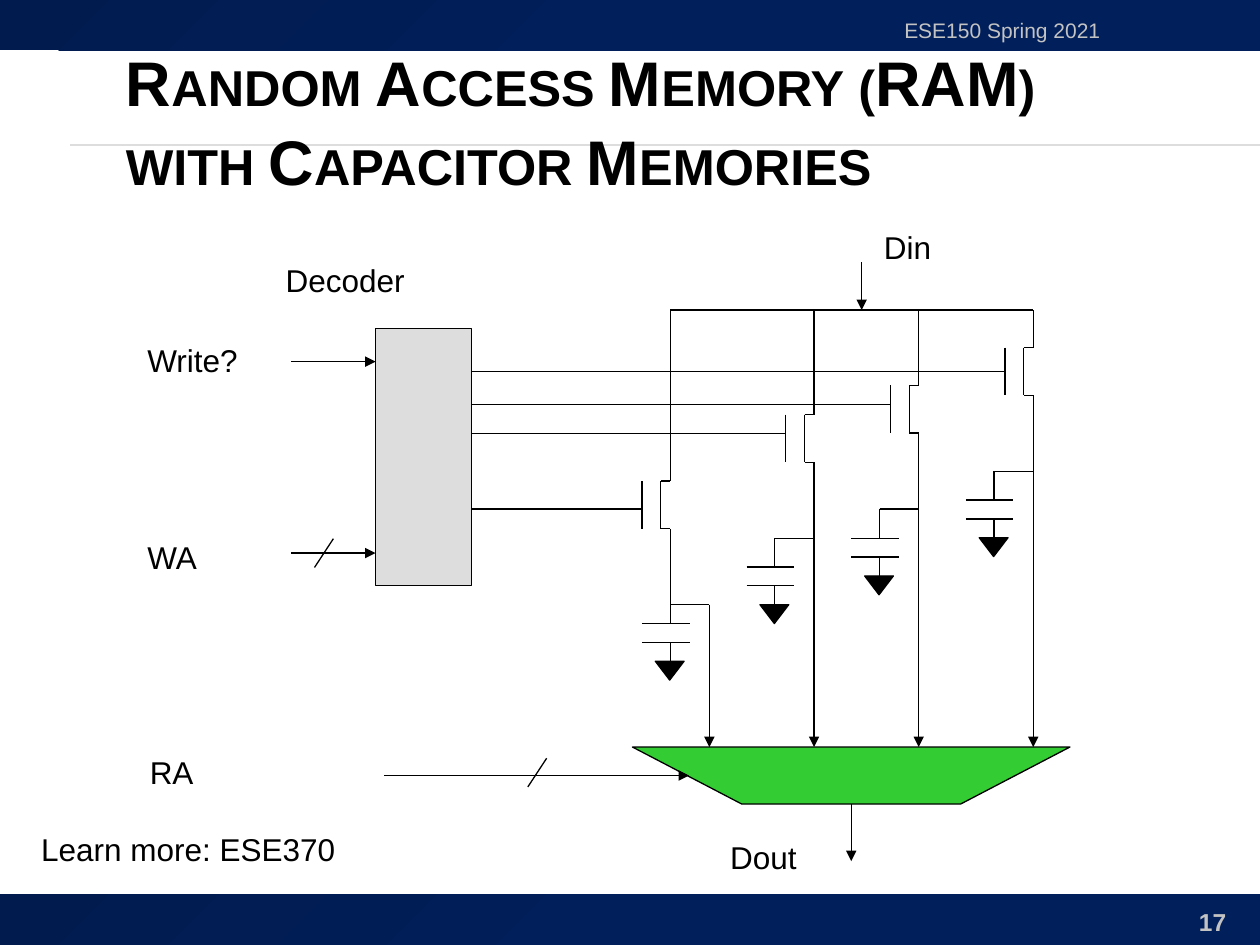
from collections import namedtuple

from lxml import etree
from pptx import Presentation
from pptx.dml.color import RGBColor
from pptx.enum.shapes import MSO_CONNECTOR, MSO_SHAPE
from pptx.enum.text import MSO_ANCHOR, PP_ALIGN
from pptx.oxml.ns import qn
from pptx.util import Cm, Pt

Box = namedtuple("Box", "left top width height")
Cell = namedtuple("Cell", "bit_x gate_top gate_wire tap plate cap_dx out_dx")

BLACK, GREY, GREEN, FOOTER_GREY = "000000", "DDDDDD", "33CC33", "C3C3C3"
NAVY_DARK, NAVY = "011B4E", "011F5B"

# Distances from the left end of the data-in bus, in cm
CELLS = [
    Cell(0, 3.45, 4.01, 5.94, 6.32, 0, 0.79),
    Cell(2.9, 2.11, 2.49, 4.6, 5.18, -0.79, 0),
    Cell(5.01, 1.52, 1.9, 4.01, 4.6, -0.79, 0),
    Cell(7.32, 0.76, 1.24, 3.25, 3.83, -0.79, 0),
]
GATE_HEIGHT = 0.96
PLATE_GAP = 0.38


def color(value):
    return RGBColor.from_string(value)


def add_line(slide, x1, y1, x2, y2, arrow=False, line_color=BLACK):
    line = slide.shapes.add_connector(
        MSO_CONNECTOR.STRAIGHT, Cm(x1), Cm(y1), Cm(x2), Cm(y2))
    line.line.color.rgb = color(line_color)
    line.line.width = Pt(0.75)
    properties = line._element.spPr
    if arrow:
        tail = etree.SubElement(properties.find(qn("a:ln")), qn("a:tailEnd"))
        tail.set("type", "triangle")
    etree.SubElement(properties, qn("a:effectLst"))
    return line


def style_shape(shape, fill):
    shape.shadow.inherit = False
    shape.fill.solid()
    shape.fill.fore_color.rgb = color(fill)
    shape.line.color.rgb = color(BLACK)
    shape.line.width = Pt(0.75)


def add_shape(slide, kind, box, fill):
    shape = slide.shapes.add_shape(kind, *map(Cm, box))
    style_shape(shape, fill)
    return shape


def add_text(slide, box, text, size=18, font_color=BLACK, bold=False,
             align=PP_ALIGN.LEFT, anchor=MSO_ANCHOR.TOP):
    text_box = slide.shapes.add_textbox(*map(Cm, box))
    frame = text_box.text_frame
    frame.word_wrap = True
    frame.vertical_anchor = anchor
    frame.text = text
    paragraph = frame.paragraphs[0]
    paragraph.alignment = align
    for run in paragraph.runs:
        run.font.name = "Arial"
        run.font.size = Pt(size)
        run.font.bold = bold
        run.font.color.rgb = color(font_color)
    return text_box


def add_bar(slide, box):
    bar = slide.shapes.add_shape(MSO_SHAPE.RECTANGLE, *map(Cm, box))
    bar.shadow.inherit = False
    bar.line.fill.background()
    bar.fill.gradient()
    bar.fill.gradient_angle = 315
    for stop, position, value in zip(
            bar.fill.gradient_stops, (0, 0.5), (NAVY_DARK, NAVY)):
        stop.position = position
        stop.color.rgb = color(value)


def draw_header(slide, box):
    add_bar(slide, box)
    add_text(slide, Box(box.left + 17.98, box.top + 0.2, 6.99, 0.81),
             "ESE150 Spring 2021", 12, FOOTER_GREY, anchor=MSO_ANCHOR.MIDDLE)


def draw_footer(slide, box):
    add_bar(slide, box)
    add_text(slide, Box(box.left + 22.86, box.top + 0.13, 2.11, 0.69),
             "17", 14, FOOTER_GREY, True, PP_ALIGN.RIGHT)


def draw_title(slide, box):
    for rule_y in (2.6, 2.63):
        y = box.top - 0.81 + 1.12 * 0 + rule_y + 0.31
        add_line(slide, 1.42, y, 25.4, y, line_color=GREY)
    title = add_text(slide, box,
                     "Random Access Memory (RAM)\vwith Capacitor Memories",
                     36, bold=True, anchor=MSO_ANCHOR.MIDDLE)
    paragraph = title.text_frame.paragraphs[0]
    paragraph.line_spacing = 1.05
    for run in paragraph.runs:
        run.font._element.set("cap", "small")


def draw_slash(slide, x, y):
    """Mark a wire centred at (x, y) as several bits wide."""
    add_line(slide, x + 0.19, y - 0.29, x - 0.19, y + 0.29)


def draw_decoder(slide, box):
    add_shape(slide, MSO_SHAPE.RECTANGLE, box, GREY)
    add_text(slide, Box(box.left - 2.06, box.top - 1.5, 3.7, 1.27), "Decoder")
    for label, wire_y, label_y in (("Write?", 0.66, 0.13), ("WA", 4.52, 4.09)):
        y = box.top + wire_y
        add_line(slide, box.left - 1.7, y, box.left, y, arrow=True)
        add_text(slide, Box(box.left - 4.85, box.top + label_y, 2.5, 1.02), label)
    draw_slash(slide, box.left - 1.04, box.top + 4.52)


def draw_transistor(slide, x, top):
    bottom = top + GATE_HEIGHT
    for offset in (0.57, 0.19):
        add_line(slide, x - offset, top, x - offset, bottom)
    for y in (top, bottom):
        add_line(slide, x - 0.19, y, x, y)


def draw_capacitor(slide, x, tap, plate):
    """Draw a grounded capacitor hanging from a wire at height tap."""
    lower_plate = plate + PLATE_GAP
    ground = lower_plate + PLATE_GAP
    add_line(slide, x, tap, x, plate)
    for y in (plate, lower_plate):
        add_line(slide, x - 0.57, y, x + 0.39, y)
    add_line(slide, x, lower_plate, x, ground)
    triangle = add_shape(slide, MSO_SHAPE.ISOSCELES_TRIANGLE,
                         Box(x - 0.3, ground, 0.58, 0.38), BLACK)
    triangle.rotation = 180


def draw_memory_array(slide, box, decoder_right):
    bottom = box.top + box.height
    add_line(slide, box.left, box.top, box.left + box.width, box.top)
    for cell in CELLS:
        x = box.left + cell.bit_x
        gate_top, gate_wire, tap, plate = (
            box.top + y for y in cell[1:5])
        cap_x, out_x = x + cell.cap_dx, x + cell.out_dx
        add_line(slide, x, box.top, x, gate_top)
        draw_transistor(slide, x, gate_top)
        add_line(slide, decoder_right, gate_wire, x - 0.57, gate_wire)
        add_line(slide, x, gate_top + GATE_HEIGHT, x, tap)
        add_line(slide, cap_x, tap, out_x, tap)
        draw_capacitor(slide, cap_x, tap, plate)
        add_line(slide, out_x, tap, out_x, bottom, arrow=True)
    din_x = box.left + 3.86
    add_line(slide, din_x, box.top - 0.96, din_x, box.top, arrow=True)
    add_text(slide, Box(din_x + 0.2, box.top - 1.78, 1.78, 1.02), "Din")


def draw_multiplexer(slide, box):
    bottom, right = box.top + box.height, box.left + box.width
    slope = box.width / 4
    builder = slide.shapes.build_freeform(Cm(box.left), Cm(box.top))
    builder.add_line_segments(
        [(Cm(box.left + slope), Cm(bottom)), (Cm(right - slope), Cm(bottom)),
         (Cm(right), Cm(box.top))], close=True)
    style_shape(builder.convert_to_shape(), GREEN)

    select_y = box.top + box.height / 2
    add_line(slide, box.left - 5, select_y, box.left + 1.14, select_y, arrow=True)
    draw_slash(slide, box.left - 1.92, select_y - 0.06)
    add_text(slide, Box(box.left - 9.98, box.top, 1.6, 1.02), "RA")

    dout_x = box.left + box.width / 2
    add_line(slide, dout_x, bottom, dout_x, bottom + 1.15, arrow=True)
    add_text(slide, Box(dout_x - 2.69, bottom + 0.56, 2.31, 1.27), "Dout")


def main():
    presentation = Presentation()
    presentation.slide_width, presentation.slide_height = Cm(25.4), Cm(19.05)
    slide = presentation.slides.add_slide(presentation.slide_layouts[6])

    draw_header(slide, Box(0, 0, 25.4, 1.02))
    draw_footer(slide, Box(0, 18.03, 25.4, 1.02))
    draw_title(slide, Box(2.29, 0.81, 21.59, 3.18))
    decoder = Box(7.57, 6.63, 1.93, 5.18)
    draw_memory_array(slide, Box(13.51, 6.25, 7.32, 8.81),
                      decoder.left + decoder.width)
    draw_decoder(slide, decoder)
    draw_multiplexer(slide, Box(12.75, 15.06, 8.82, 1.15))
    add_text(slide, Box(0.58, 16.61, 6.7, 1.02), "Learn more: ESE370")

    presentation.save("out.pptx")


if __name__ == "__main__":
    main()
